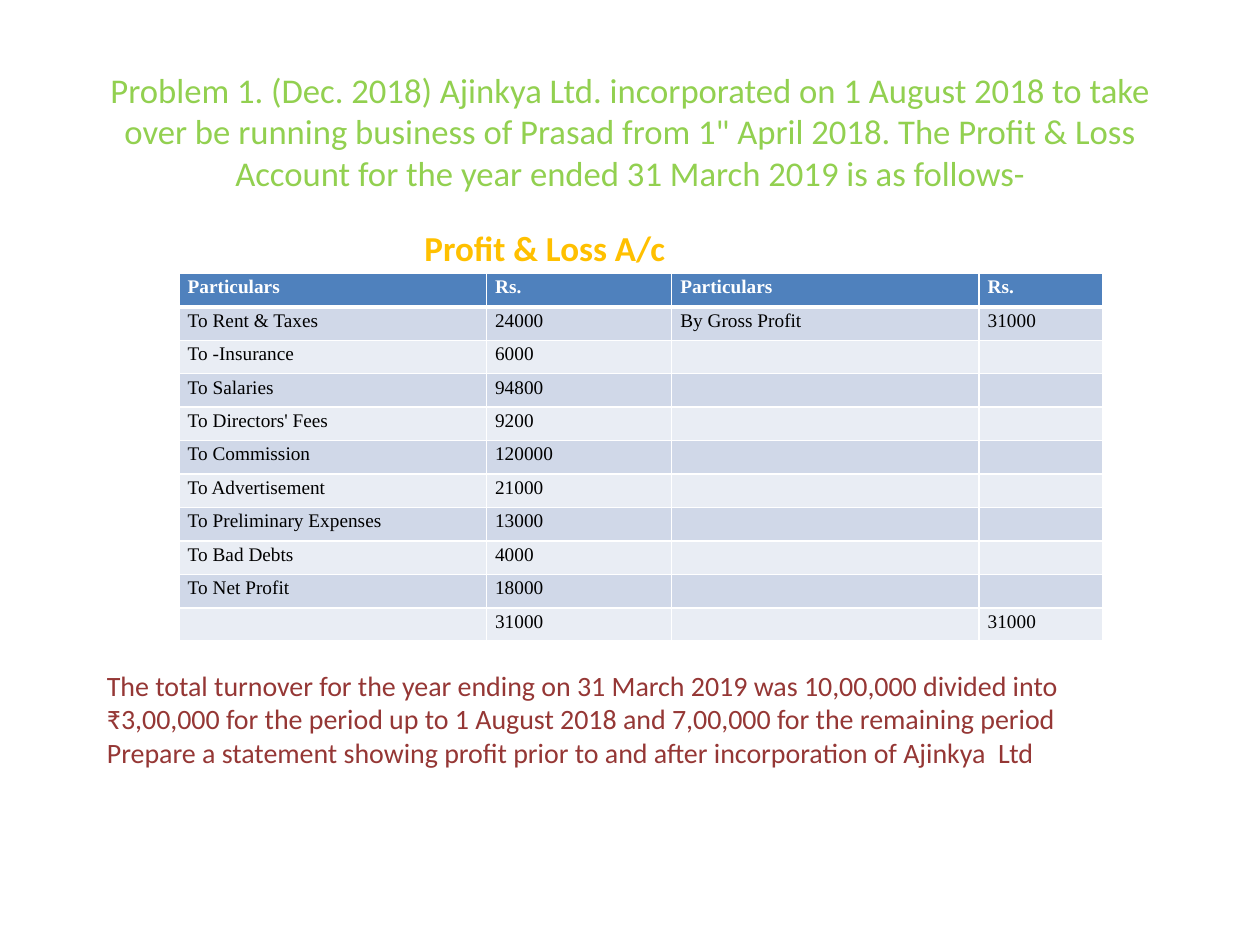
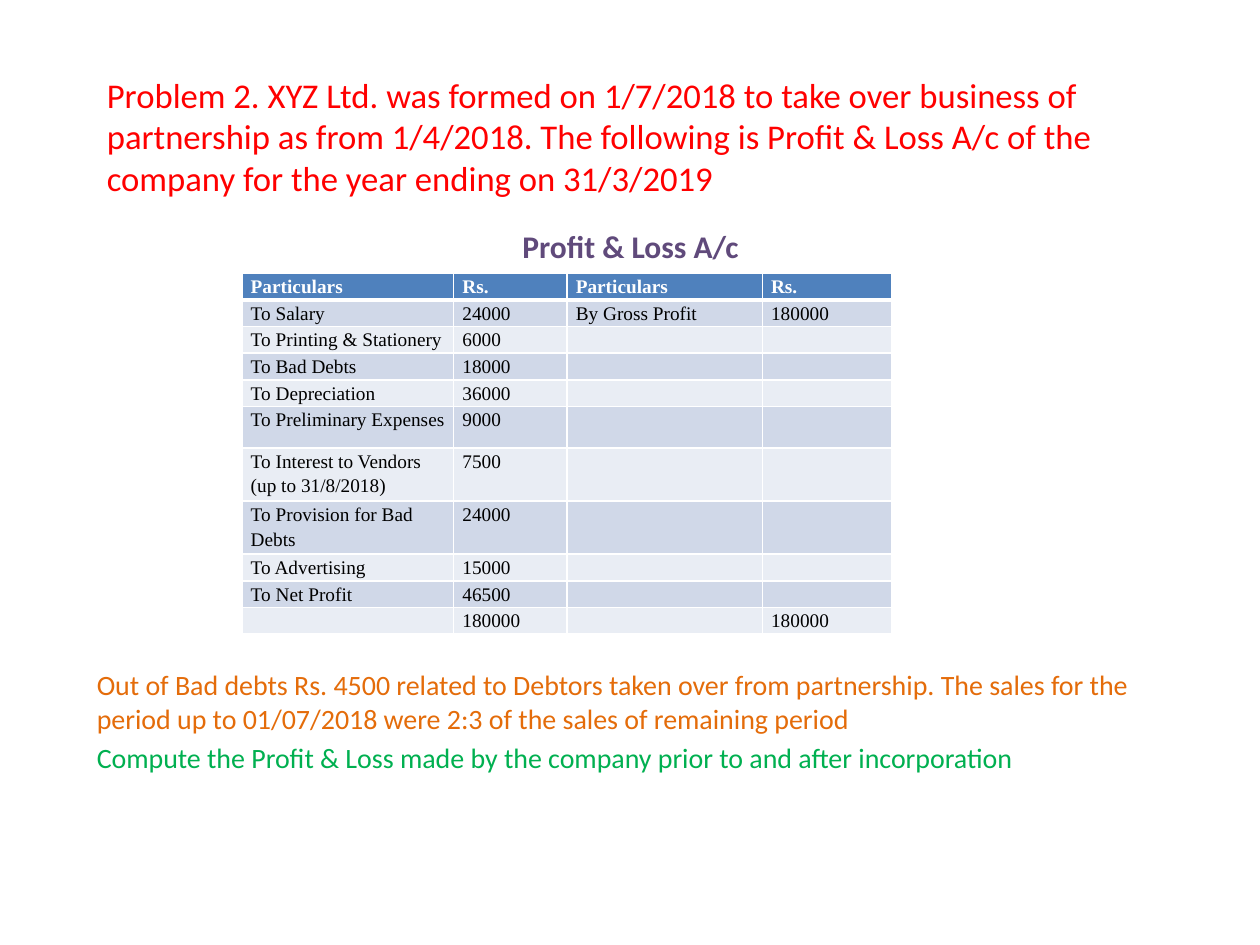
from dataclasses import dataclass

from lxml import etree
from pptx import Presentation
from pptx.dml.color import RGBColor
from pptx.enum.text import MSO_ANCHOR, PP_ALIGN as Align
from pptx.oxml.ns import qn
from pptx.util import Inches, Pt


@dataclass(frozen=True)
class Theme:
    text_font: str = "Calibri"
    table_font: str = "Times New Roman"
    title_size: float = 19.8
    note_size: int = 16
    table_size: int = 11
    header_fill: str = "4F81BD"
    bands: tuple = ("D0D8E8", "E9EDF4")
    border: str = "FFFFFF"
    header_text: str = "FFFFFF"
    cell_text: str = "000000"
    lime: str = "92D050"
    gold: str = "FFC000"
    brown: str = "953735"
    red: str = "FF0000"
    purple: str = "604A7B"
    orange: str = "E46C0A"
    green: str = "00B050"


THEME = Theme()
ACCOUNT_TITLE = "Profit & Loss A/c"
ACCOUNT_HEADER = ("Particulars", "Rs.", "Particulars", "Rs.")


def set_all(target, **values):
    for name, value in values.items():
        setattr(target, name, value)


def write(paragraph, text, font, size, color, bold=False):
    run = paragraph.add_run()
    run.text = text
    set_all(run.font, name=font, size=Pt(size), bold=bold)
    run.font.color.rgb = RGBColor.from_string(color)


def add_text_frame(slide, box, anchor=MSO_ANCHOR.TOP):
    shape = slide.shapes.add_textbox(*map(Inches, box))
    set_all(shape.text_frame, word_wrap=True, vertical_anchor=anchor)
    return shape.text_frame


def add_problem(slide, box, text, color, alignment):
    paragraph = add_text_frame(slide, box, MSO_ANCHOR.MIDDLE).paragraphs[0]
    paragraph.alignment = alignment
    write(paragraph, text, THEME.text_font, THEME.title_size, color)


def add_account_text(slide, box, heading_size, heading_color, notes, gap, indent=None):
    """Heading above the table and notes below it; gap is the room for the table.

    The heading is centred unless an indent is given.
    """
    frame = add_text_frame(slide, box)
    heading = frame.paragraphs[0]
    if indent is None:
        heading.alignment = Align.CENTER
    else:
        heading._p.get_or_add_pPr().set("marL", str(Inches(indent)))
    write(heading, ACCOUNT_TITLE, THEME.text_font, heading_size, heading_color, bold=True)
    for index, (text, color) in enumerate(notes):
        paragraph = frame.add_paragraph()
        paragraph.space_before = Inches(gap) if index == 0 else Pt(0.2 * THEME.note_size)
        write(paragraph, text, THEME.text_font, THEME.note_size, color)


def add_border(cell, side, width):
    properties = cell._tc.get_or_add_tcPr()
    line = etree.SubElement(properties, qn(f"a:ln{side}"), w=str(Pt(width)))
    fill = etree.SubElement(line, qn("a:solidFill"))
    etree.SubElement(fill, qn("a:srgbClr"), val=THEME.border)


def format_cell(cell, text, row_index):
    is_header = row_index == 0
    set_all(cell, margin_left=Inches(0.07), margin_right=Inches(0.07),
            margin_top=0, margin_bottom=0)
    # The line under the header is thicker than the others
    widths = {"L": 1, "R": 1, "T": 3 if row_index == 1 else 1, "B": 3 if is_header else 1}
    for side, width in widths.items():
        add_border(cell, side, width)
    cell.fill.solid()
    fill = THEME.header_fill if is_header else THEME.bands[(row_index - 1) % 2]
    cell.fill.fore_color.rgb = RGBColor.from_string(fill)
    paragraph = cell.text_frame.paragraphs[0]
    paragraph.line_spacing = 1.15
    if text:
        color = THEME.header_text if is_header else THEME.cell_text
        write(paragraph, text, THEME.table_font, THEME.table_size, color, is_header)
    else:
        end = etree.SubElement(paragraph._p, qn("a:endParaRPr"), sz=str(THEME.table_size * 100))
        etree.SubElement(end, qn("a:latin"), typeface=THEME.table_font)


def add_account(slide, left, top, widths, heights, expenses, total):
    """Two-sided account: expenses on the left, gross profit on the right."""
    rows = [ACCOUNT_HEADER]
    rows += [(label, amount, "", "") for label, amount in expenses]
    rows[1] = (*expenses[0], "By Gross Profit", total)
    rows.append(("", total, "", total))
    size = (left, top, sum(widths), sum(heights))
    table = slide.shapes.add_table(len(rows), len(widths), *map(Inches, size)).table
    for column, width in zip(table.columns, widths):
        column.width = Inches(width)
    for row_index, (row, height, texts) in enumerate(zip(table.rows, heights, rows)):
        row.height = Inches(height)
        for cell, text in zip(row.cells, texts):
            format_cell(cell, text, row_index)


def build_problem_1(slide):
    add_problem(
        slide, (0.75, 0.5, 8.5, 1.08),
        "Problem 1. (Dec. 2018) Ajinkya Ltd. incorporated on 1 August 2018 to take over be "
        "running business of Prasad from 1\" April 2018. The Profit & Loss Account for the "
        "year ended 31 March 2019 is as follows-",
        THEME.lime, Align.CENTER)
    notes = [(
        "The total turnover for the year ending on 31 March 2019 was 10,00,000 divided into "
        "₹3,00,000 for the period up to 1 August 2018 and 7,00,000 for the remaining period "
        "Prepare a statement showing profit prior to and after incorporation of Ajinkya  Ltd",
        THEME.brown)]
    add_account_text(slide, (0.75, 1.75, 8.25, 4.75), 20, THEME.gold, notes,
                     gap=3.17, indent=2.52)
    expenses = [
        ("To Rent & Taxes", "24000"),
        ("To -Insurance", "6000"),
        ("To Salaries", "94800"),
        ("To Directors' Fees", "9200"),
        ("To Commission", "120000"),
        ("To Advertisement", "21000"),
        ("To Preliminary Expenses", "13000"),
        ("To Bad Debts", "4000"),
        ("To Net Profit", "18000"),
    ]
    add_account(slide, 1.42, 2.17, (2.44, 1.47, 2.44, 0.98), [2.92 / 11] * 11,
                expenses, "31000")


def build_problem_2(slide):
    add_problem(
        slide, (0.75, 0.58, 8.5, 1),
        "Problem 2. XYZ Ltd. was formed on 1/7/2018 to take over business of partnership as "
        "from 1/4/2018. The following is Profit & Loss A/c of the company for the year "
        "ending on 31/3/2019",
        THEME.red, Align.LEFT)
    notes = [
        ("Out of Bad debts Rs. 4500 related to Debtors taken over from partnership. The sales "
         "for the period up to 01/07/2018 were 2:3 of the sales of remaining period",
         THEME.orange),
        ("Compute the Profit & Loss made by the company prior to and after incorporation",
         THEME.green),
    ]
    add_account_text(slide, (0.67, 1.75, 8.67, 4.58), 18, THEME.purple, notes, gap=3.2)
    expenses = [
        ("To Salary", "24000"),
        ("To Printing & Stationery", "6000"),
        ("To Bad Debts", "18000"),
        ("To Depreciation", "36000"),
        ("To Preliminary Expenses", "9000"),
        ("To Interest to Vendors (up to 31/8/2018)", "7500"),
        ("To Provision for Bad Debts", "24000"),
        ("To Advertising", "15000"),
        ("To Net Profit", "46500"),
    ]
    heights = [0.17] * 5 + [0.33] * 3 + [0.17] * 3
    add_account(slide, 1.92, 2.17, (1.68, 0.9, 1.55, 1.03), heights, expenses, "180000")


def main():
    presentation = Presentation()
    set_all(presentation, slide_width=Inches(10), slide_height=Inches(7.5))
    blank_layout = presentation.slide_layouts[6]
    for build in (build_problem_1, build_problem_2):
        build(presentation.slides.add_slide(blank_layout))
    presentation.save("out.pptx")


if __name__ == "__main__":
    main()
